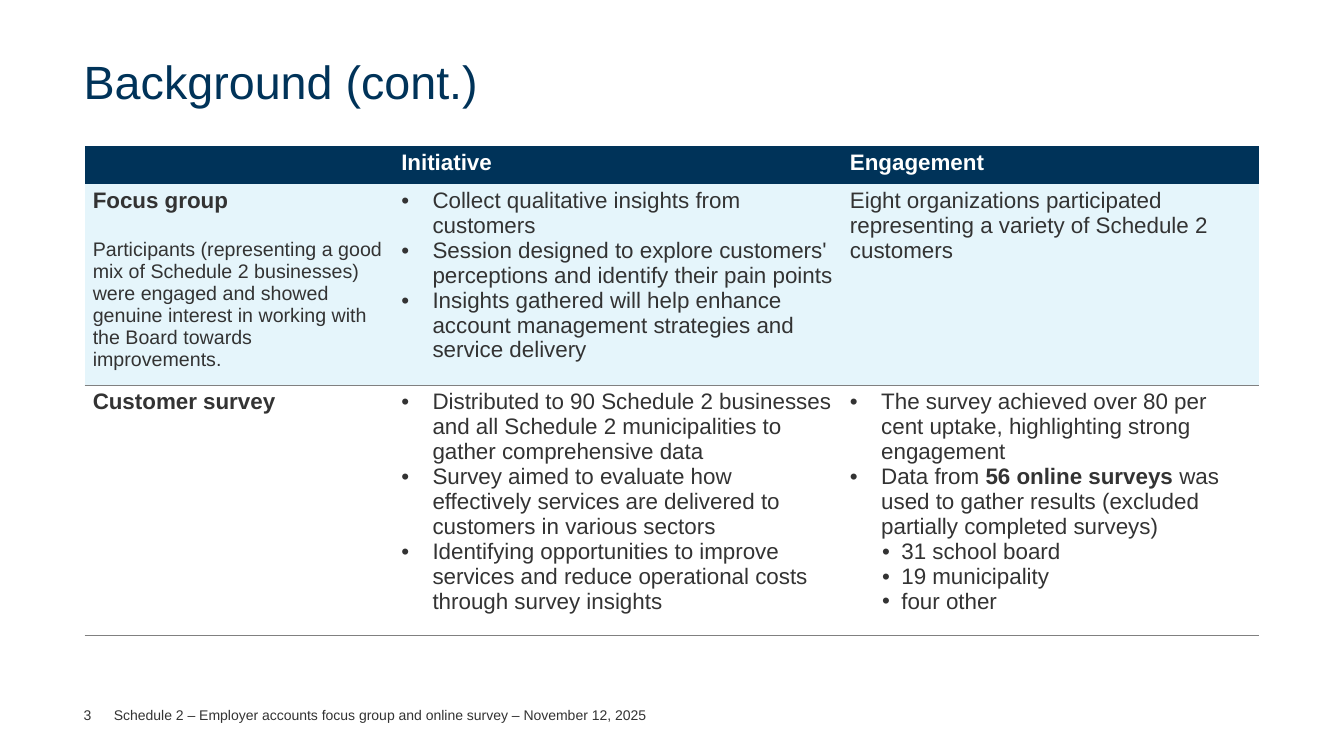
from lxml import etree
from pptx import Presentation
from pptx.dml.color import RGBColor
from pptx.enum.text import MSO_ANCHOR
from pptx.oxml.ns import qn
from pptx.util import Inches, Pt

TOP, MIDDLE = MSO_ANCHOR.TOP, MSO_ANCHOR.MIDDLE
FONT = "Arial"
COLORS = {"navy": "003359", "text": "333333", "white": "FFFFFF",
          "pale": "E5F5FB", "rule": "808080"}
INDENTS = {1: (0.31, 0.31), 2: (0.51, 0.19)}

HEADERS = ["", "Initiative", "Engagement"]
FOCUS_GROUP = [
    [{"text": "Focus group", "bold": True},
     {"text": "Participants (representing a good mix of Schedule 2 businesses) "
              "were engaged and showed genuine interest in working with the "
              "Board towards improvements.", "size": 14, "before": 18}],
    [{"text": "Collect qualitative insights from customers", "level": 1},
     {"text": "Session designed to explore customers' perceptions and identify "
              "their pain points", "level": 1},
     {"text": "Insights gathered will help enhance account management strategies "
              "and service delivery", "level": 1}],
    [{"text": "Eight organizations participated representing a variety of "
              "Schedule 2 customers"}],
]
CUSTOMER_SURVEY = [
    [{"text": "Customer survey", "bold": True}],
    [{"text": "Distributed to 90 Schedule 2 businesses and all Schedule 2 "
              "municipalities to gather comprehensive data", "level": 1},
     {"text": "Survey aimed to evaluate how effectively services are delivered "
              "to customers in various sectors", "level": 1},
     {"text": "Identifying opportunities to improve services and reduce "
              "operational costs through survey insights", "level": 1}],
    [{"text": "The survey achieved over 80 per cent uptake, highlighting strong "
              "engagement", "level": 1},
     {"text": ["Data from ", "56 online surveys", " was used to gather results "
               "(excluded partially completed surveys)"], "level": 1},
     {"text": "31 school board", "level": 2},
     {"text": "19 municipality", "level": 2},
     {"text": "four other", "level": 2}],
]


def add_bullet(p, level):
    left, hanging = INDENTS[level]
    pPr = p._p.get_or_add_pPr()
    pPr.set("marL", str(Inches(left)))
    pPr.set("indent", str(-Inches(hanging)))
    etree.SubElement(pPr, qn("a:buFont")).set("typeface", FONT)
    etree.SubElement(pPr, qn("a:buChar")).set("char", "•")


def write(p, text, size=16, color="text", bold=False, level=0, before=0, spacing=None):
    if level:
        add_bullet(p, level)
    if before:
        p.space_before = Pt(before)
    if spacing:
        p.line_spacing = spacing
    parts = [text] if isinstance(text, str) else text
    for i, part in enumerate(parts):
        r = p.add_run()
        r.text = part
        r.font.name = FONT
        r.font.size = Pt(size)
        r.font.bold = bold or i % 2 == 1
        r.font.color.rgb = RGBColor.from_string(COLORS[color])


def add_text(s, text, x, y, w, h, anchor=MIDDLE, wrap=False, **fmt):
    tf = s.shapes.add_textbox(Inches(x), Inches(y), Inches(w), Inches(h)).text_frame
    tf.margin_left = tf.margin_right = tf.margin_top = tf.margin_bottom = 0
    tf.word_wrap = wrap
    tf.vertical_anchor = anchor
    write(tf.paragraphs[0], text, **fmt)


def set_borders(cell, ruled):
    tcPr = cell._tc.get_or_add_tcPr()
    for i, side in enumerate(("lnL", "lnR", "lnT", "lnB")):
        ln = etree.Element(qn("a:" + side), w=str(Pt(1)))
        if side in ruled:
            fill = etree.SubElement(ln, qn("a:solidFill"))
            etree.SubElement(fill, qn("a:srgbClr")).set("val", COLORS["rule"])
        else:
            etree.SubElement(ln, qn("a:noFill"))
        tcPr.insert(i, ln)


def fill_cell(cell, paragraphs, fill=None, ruled=()):
    cell.margin_left = cell.margin_right = Inches(0.08)
    cell.margin_top = cell.margin_bottom = Inches(0.04)
    if fill:
        cell.fill.solid()
        cell.fill.fore_color.rgb = RGBColor.from_string(COLORS[fill])
    else:
        cell.fill.background()
    set_borders(cell, ruled)
    tf = cell.text_frame
    for i, item in enumerate(paragraphs):
        write(tf.add_paragraph() if i else tf.paragraphs[0], **item)


def add_initiatives(s):
    widths, heights = [3.06, 4.45, 4.14], [0.35, 1.89, 2.3]
    table = s.shapes.add_table(3, 3, Inches(0.84), Inches(1.45),
                               Inches(sum(widths)), Inches(sum(heights))).table
    table.horz_banding = False
    for col, w in zip(table.columns, widths):
        col.width = Inches(w)
    for row, h in zip(table.rows, heights):
        row.height = Inches(h)
    header = [[{"text": h, "color": "white", "bold": True}] for h in HEADERS]
    rows = [(header, "navy", ()),
            (FOCUS_GROUP, "pale", ("lnB",)),
            (CUSTOMER_SURVEY, None, ("lnT", "lnB"))]
    for row, (cells, fill, ruled) in zip(table.rows, rows):
        for cell, paragraphs in zip(row.cells, cells):
            fill_cell(cell, paragraphs, fill, ruled)


def main():
    prs = Presentation()
    prs.slide_width, prs.slide_height = Inches(13.33), Inches(7.5)
    s = prs.slides.add_slide(prs.slide_layouts[6])
    add_text(s, "Background (cont.)", 0.83, 0.59, 11.67, 0.5, anchor=TOP, wrap=True,
             size=33.3, color="navy", spacing=0.9)
    add_initiatives(s)
    add_text(s, "3", 0.83, 6.99, 0.21, 0.21, size=10)
    add_text(s, "Schedule 2 – Employer accounts focus group and online survey – "
                "November 12, 2025", 1.13, 6.99, 10, 0.21, size=10)
    prs.save("out.pptx")


if __name__ == "__main__":
    main()
